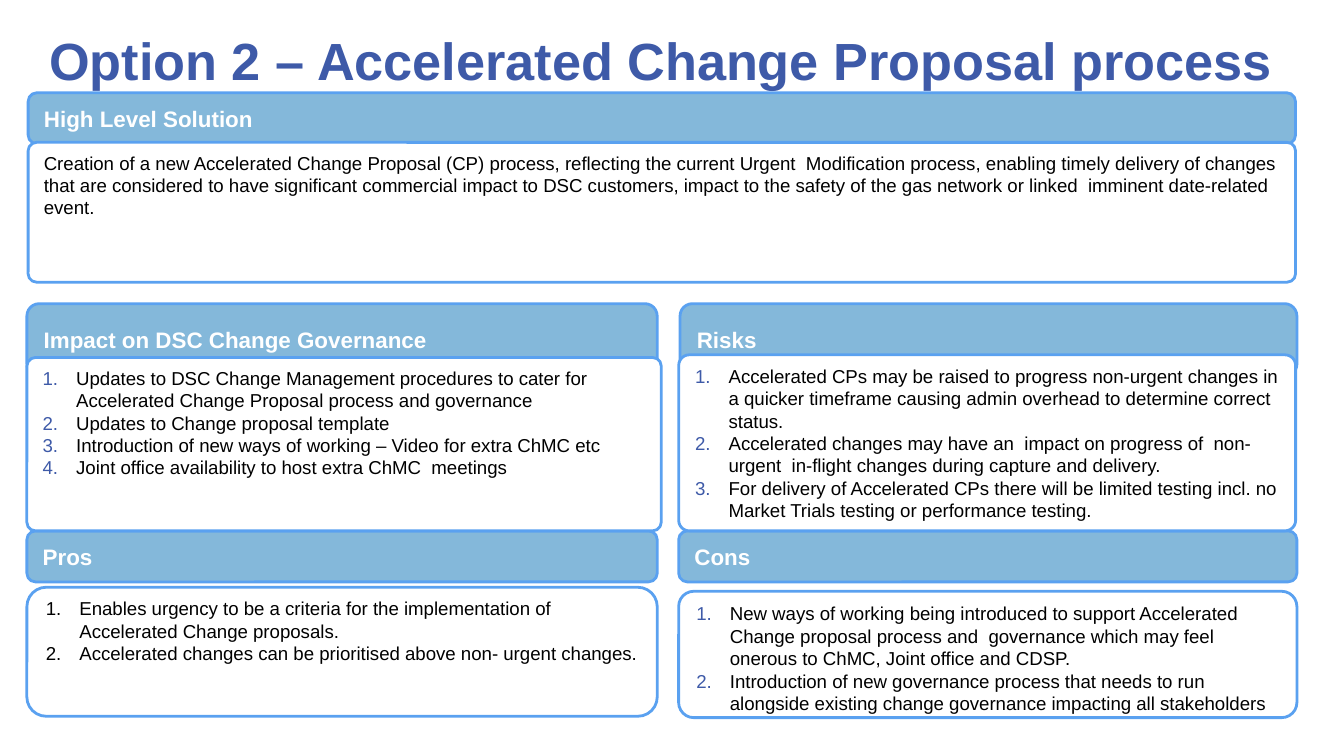
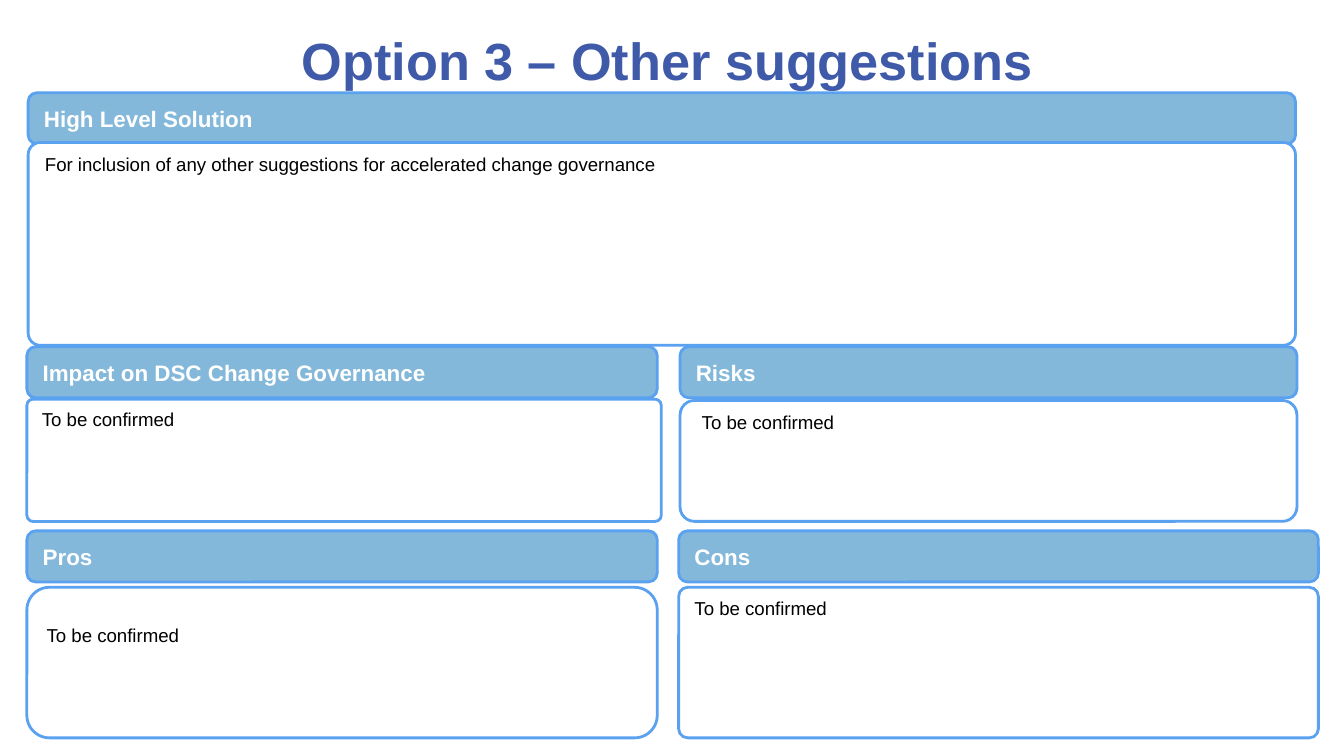
from dataclasses import dataclass
from typing import NamedTuple, Optional

from lxml import etree
from pptx import Presentation
from pptx.dml.color import RGBColor
from pptx.enum.shapes import MSO_SHAPE
from pptx.enum.text import MSO_ANCHOR, PP_ALIGN
from pptx.oxml.ns import qn
from pptx.util import Inches, Pt

ROUNDED = MSO_SHAPE.ROUNDED_RECTANGLE
TOP, MIDDLE = MSO_ANCHOR.TOP, MSO_ANCHOR.MIDDLE
LEFT, CENTER = PP_ALIGN.LEFT, PP_ALIGN.CENTER


@dataclass(frozen=True)
class Theme:
    font: str = "Arial"
    navy: str = "3E5AA8"
    band: str = "84B8DA"
    outline: str = "5AA1F0"
    white: str = "FFFFFF"
    black: str = "000000"
    title_size: int = 28
    heading_size: int = 12
    body_size: int = 10
    line_width: float = 1.5
    heading_corner: float = 0.17


THEME = Theme()


class Box(NamedTuple):
    left: float
    top: float
    width: float
    height: float


@dataclass(frozen=True)
class Panel:
    heading: str
    band: Box
    body: Box
    corner: float
    lines: tuple[str, ...]
    numbers: Optional[str] = None
    inset_left: float = 0.1
    inset_top: float = 0.05


@dataclass(frozen=True)
class OptionPage:
    title: str
    panels: tuple[Panel, ...]
    title_inset_right: float = 0.1


TITLE_BOX = Box(0.21, -0.12, 9.51, 1.12)
SOLUTION_BAND = Box(0.21, 0.69, 9.43, 0.38)
PROS_BAND = Box(0.2, 3.95, 4.69, 0.38)
TBC = ("To be confirmed",)

PAGES = (
    OptionPage(
        "Option 2 – Accelerated Change Proposal process",
        (
            Panel("Cons", Box(5.05, 3.95, 4.6, 0.38), Box(5.05, 4.4, 4.6, 0.94), 0.12, (
                "New ways of working being introduced to support Accelerated Change proposal "
                "process and  governance which may feel onerous to ChMC, Joint office and CDSP.",
                "Introduction of new governance process that needs to run alongside existing "
                "change governance impacting all stakeholders",
            ), numbers=THEME.navy),
            Panel("Risks", Box(5.06, 2.26, 4.59, 0.54), Box(5.05, 2.64, 4.59, 1.31), 0.06, (
                "Accelerated CPs may be raised to progress non-urgent changes in a quicker "
                "timeframe causing admin overhead to determine correct status.",
                "Accelerated changes may have an  impact on progress of  non-urgent  in-flight "
                "changes during capture and delivery.",
                "For delivery of Accelerated CPs there will be limited testing incl. no Market "
                "Trials testing or performance testing.",
            ), numbers=THEME.navy),
            Panel("High Level Solution", SOLUTION_BAND, Box(0.21, 1.06, 9.43, 1.04), 0.06, (
                "Creation of a new Accelerated Change Proposal (CP) process, reflecting the "
                "current Urgent  Modification process, enabling timely delivery of changes that "
                "are considered to have significant commercial impact to DSC customers, impact to "
                "the safety of the gas network or linked  imminent date-related event.",
            )),
            Panel("Pros", PROS_BAND, Box(0.2, 4.37, 4.69, 0.96), 0.15, (
                "Enables urgency to be a criteria for the implementation of Accelerated Change "
                "proposals.",
                "Accelerated changes can be prioritised above non- urgent changes.",
            ), numbers=THEME.black, inset_top=0.03),
            Panel("Impact on DSC Change Governance", Box(0.2, 2.26, 4.69, 0.54),
                  Box(0.2, 2.66, 4.72, 1.29), 0.05, (
                "Updates to DSC Change Management procedures to cater for Accelerated Change "
                "Proposal process and governance",
                "Updates to Change proposal template",
                "Introduction of new ways of working – Video for extra ChMC etc",
                "Joint office availability to host extra ChMC  meetings",
            ), numbers=THEME.navy),
        ),
        title_inset_right=0.2,
    ),
    OptionPage(
        "Option 3 – Other suggestions",
        (
            Panel("Risks", Box(5.06, 2.58, 4.59, 0.38), Box(5.06, 2.98, 4.59, 0.9), 0.12, TBC,
                  inset_left=0.13),
            Panel("Cons", Box(5.05, 3.95, 4.76, 0.38), Box(5.05, 4.37, 4.76, 1.12), 0.06, TBC),
            Panel("High Level Solution", SOLUTION_BAND, Box(0.21, 1.06, 9.43, 1.51), 0.06,
                  ("For inclusion of any other suggestions for accelerated change governance",)),
            Panel("Pros", PROS_BAND, Box(0.2, 4.37, 4.69, 1.12), 0.15, TBC, inset_top=0.22),
            Panel("Impact on DSC Change Governance", Box(0.2, 2.58, 4.69, 0.38),
                  Box(0.2, 2.97, 4.72, 0.91), 0.05, TBC),
        ),
    ),
)


def rgb(value: str) -> RGBColor:
    return RGBColor.from_string(value)


def number_paragraph(p, color: str) -> None:
    """Give a paragraph a hanging automatic number in the given colour."""
    pPr = p._p.get_or_add_pPr()
    pPr.set("marL", str(Inches(0.25)))
    pPr.set("indent", str(-Inches(0.25)))
    clr = etree.SubElement(pPr, qn("a:buClr"))
    etree.SubElement(clr, qn("a:srgbClr"), val=color)
    etree.SubElement(pPr, qn("a:buFont"), typeface=THEME.font)
    etree.SubElement(pPr, qn("a:buAutoNum"), type="arabicPeriod")


def write(sp, lines: tuple[str, ...], *, size: int, color: str, bold: bool = False,
          align=LEFT, anchor=TOP, numbers: Optional[str] = None, inset_left: float = 0.1,
          inset_top: float = 0.05, inset_right: float = 0.1) -> None:
    tf = sp.text_frame
    tf.word_wrap = True
    tf.vertical_anchor = anchor
    tf.margin_left, tf.margin_right = Inches(inset_left), Inches(inset_right)
    tf.margin_top, tf.margin_bottom = Inches(inset_top), Inches(0.05)
    for i, line in enumerate(lines):
        p = tf.add_paragraph() if i else tf.paragraphs[0]
        p.alignment = align
        if numbers:
            number_paragraph(p, numbers)
        r = p.add_run()
        r.text = line
        r.font.name, r.font.size, r.font.bold = THEME.font, Pt(size), bold
        r.font.color.rgb = rgb(color)


def add_rounded(slide, box: Box, fill: str, corner: float):
    sp = slide.shapes.add_shape(ROUNDED, *map(Inches, box))
    sp.adjustments[0] = corner
    sp.shadow.inherit = False
    sp.fill.solid()
    sp.fill.fore_color.rgb = rgb(fill)
    sp.line.color.rgb = rgb(THEME.outline)
    sp.line.width = Pt(THEME.line_width)
    return sp


def add_panel(slide, panel: Panel) -> None:
    band = add_rounded(slide, panel.band, THEME.band, THEME.heading_corner)
    write(band, (panel.heading,), size=THEME.heading_size, color=THEME.white, bold=True,
          anchor=MIDDLE)
    body = add_rounded(slide, panel.body, THEME.white, panel.corner)
    write(body, panel.lines, size=THEME.body_size, color=THEME.black, numbers=panel.numbers,
          inset_left=panel.inset_left, inset_top=panel.inset_top)


def add_page(prs, page: OptionPage) -> None:
    slide = prs.slides.add_slide(prs.slide_layouts[6])
    title = slide.shapes.add_textbox(*map(Inches, TITLE_BOX))
    write(title, (page.title,), size=THEME.title_size, color=THEME.navy, bold=True,
          align=CENTER, anchor=MIDDLE, inset_right=page.title_inset_right)
    for panel in page.panels:
        add_panel(slide, panel)


def main() -> None:
    prs = Presentation()
    prs.slide_width = Inches(10)
    prs.slide_height = Inches(10 * 9 / 16)
    for page in PAGES:
        add_page(prs, page)
    prs.save("out.pptx")


if __name__ == "__main__":
    main()
